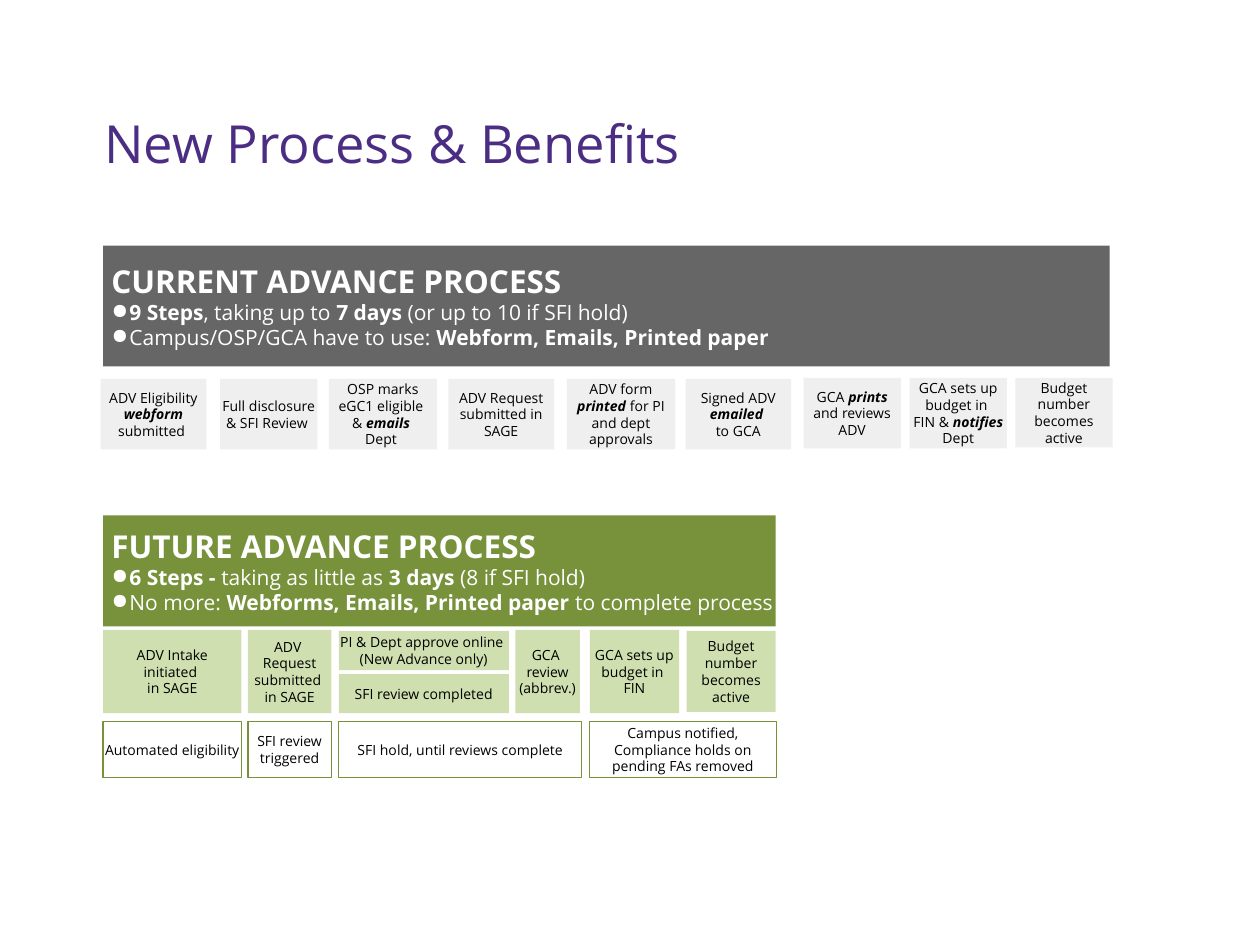
from dataclasses import dataclass

from lxml import etree
from pptx import Presentation
from pptx.dml.color import RGBColor
from pptx.enum.shapes import MSO_SHAPE
from pptx.enum.text import MSO_ANCHOR, PP_ALIGN
from pptx.oxml.ns import qn
from pptx.util import Cm, Pt

RECTANGLE = MSO_SHAPE.RECTANGLE
MIDDLE, BOTTOM = MSO_ANCHOR.MIDDLE, MSO_ANCHOR.BOTTOM
LEFT, CENTER = PP_ALIGN.LEFT, PP_ALIGN.CENTER


@dataclass(frozen=True)
class Theme:
    """Colours, type sizes and font of the slide."""
    font: str = "Open Sans"
    purple: str = "4B2E83"
    white: str = "FFFFFF"
    black: str = "000000"
    grey: str = "666666"
    pale_grey: str = "EFEFEF"
    green: str = "77923B"
    pale_green: str = "D0DFB0"
    title: int = 30
    heading: int = 18
    point: int = 12
    step: int = 8


THEME = Theme()

CURRENT_POINTS = [
    "|9 Steps|, taking up to |7 days |(or up to 10 if SFI hold)",
    "Campus/OSP/GCA have to use:| Webform, Emails, Printed paper|",
]
CURRENT_STEPS = [
    (-0.05, 2.69, 2.13, 1.42, "ADV Eligibility |webform |submitted "),
    (2.36, 2.69, 1.96, 1.42, "Full disclosure & SFI Review "),
    (4.55, 2.69, 2.18, 1.42, "OSP marks eGC1 eligible \v& |emails \v|Dept "),
    (6.96, 2.69, 2.13, 1.42, "ADV Request submitted in SAGE"),
    (9.35, 2.69, 2.18, 1.42, "ADV form |printed |for PI and dept approvals"),
    (11.74, 2.69, 2.13, 1.42, "Signed ADV |emailed |\nto GCA"),
    (14.12, 2.67, 1.96, 1.42, "GCA |prints| and reviews ADV"),
    (16.26, 2.67, 1.96, 1.42, "GCA sets up budget in \nFIN & |notifies |Dept"),
    (18.39, 2.67, 1.96, 1.4, "Budget number becomes active"),
]
FUTURE_POINTS = [
    "|6 Steps - |taking as little as |3 days |(8 if SFI hold)",
    "No more: |Webforms, Emails, Printed paper| to complete process",
]
FUTURE_STEPS = [
    (0, 2.31, 2.79, 1.68, "ADV Intake\ninitiated \nin SAGE"),
    (2.92, 2.31, 1.68, 1.68, "ADV \nRequest submitted \nin SAGE"),
    (4.75, 2.33, 3.43, 0.79, "PI & Dept approve online \v(New Advance only)"),
    (4.75, 3.2, 3.43, 0.79, "SFI review completed"),
    (8.31, 2.31, 1.3, 1.68, "GCA \nreview (abbrev.)"),
    (9.81, 2.31, 1.8, 1.68, "GCA sets up budget in \nFIN"),
    (11.76, 2.33, 1.8, 1.63, "Budget number becomes active"),
]
FUTURE_NOTES = [
    (0, 4.16, 2.79, 1.12, "Automated eligibility"),
    (2.92, 4.16, 1.68, 1.12, "SFI review triggered"),
    (4.75, 4.16, 4.9, 1.12, "SFI hold, until reviews complete"),
    (9.81, 4.16, 3.76, 1.12, "Campus notified, Compliance holds on pending FAs removed"),
]


def set_frame(frame, anchor, side=0.0, edge=0.25):
    """Set wrapping, anchor and insets of a text frame."""
    frame.word_wrap = True
    frame.vertical_anchor = anchor
    frame.margin_left = frame.margin_right = Cm(side)
    frame.margin_top = frame.margin_bottom = Cm(edge)


def add_bullet(para, color):
    """Give a paragraph a hanging round bullet."""
    props = para._p.get_or_add_pPr()
    props.set("marL", str(Cm(0.53)))
    props.set("indent", str(Cm(-0.36)))
    fill = etree.SubElement(props, qn("a:buClr"))
    etree.SubElement(fill, qn("a:srgbClr")).set("val", color)
    etree.SubElement(props, qn("a:buChar")).set("char", "●")


def write(para, text, *, size, color, align=LEFT, bold=False, italic_marks=False, bullet=False):
    """Write text in a paragraph; bars enclose emphasis, vertical tabs break lines."""
    if bullet:
        add_bullet(para, color)
    para.alignment = align
    for index, piece in enumerate(text.split("|")):
        marked = index % 2 == 1
        for number, line in enumerate(piece.split("\v")):
            if number:
                para.add_line_break()
            if not line:
                continue
            span = para.add_run()
            span.text = line
            span.font.name = THEME.font
            span.font.size = Pt(size)
            span.font.bold = bold or marked
            span.font.italic = marked and italic_marks
            span.font.color.rgb = RGBColor.from_string(color)


def add_block(page, left, top, width, height, fill, line=None):
    """Add a flat rectangle and return it."""
    box = page.shapes.add_shape(RECTANGLE, Cm(left), Cm(top), Cm(width), Cm(height))
    box.shadow.inherit = False
    box.fill.solid()
    box.fill.fore_color.rgb = RGBColor.from_string(fill)
    if line:
        box.line.color.rgb = RGBColor.from_string(line)
        box.line.width = Pt(0.75)
    else:
        box.line.fill.background()
    return box


def add_title(page, left, top, width, height, text):
    """Add the slide title."""
    frame = page.shapes.add_textbox(Cm(left), Cm(top), Cm(width), Cm(height)).text_frame
    set_frame(frame, BOTTOM, side=0.25)
    para = frame.paragraphs[0]
    para.line_spacing = 0.9
    write(para, text, size=THEME.title, color=THEME.purple)


def add_banner(page, left, top, width, height, heading, points, fill):
    """Add a coloured banner with a heading and bullet points."""
    frame = add_block(page, left, top, width, height, fill).text_frame
    set_frame(frame, MIDDLE)
    write(frame.paragraphs[0], heading, size=THEME.heading, color=THEME.white, bold=True)
    for point in points:
        write(frame.add_paragraph(), point, size=THEME.point, color=THEME.white, bullet=True)


def add_steps(page, left, top, steps, fill, line=None, edge=0.25):
    """Add step boxes at offsets from the corner of their region."""
    for across, down, width, height, text in steps:
        frame = add_block(page, left + across, top + down, width, height, fill, line).text_frame
        set_frame(frame, MIDDLE, edge=edge)
        for index, part in enumerate(text.split("\n")):
            para = frame.add_paragraph() if index else frame.paragraphs[0]
            write(para, part, size=THEME.step, color=THEME.black, align=CENTER, italic_marks=True)


def add_current_process(page, left, top, width, height):
    """Add the current process: banner and nine steps."""
    add_banner(page, left, top, width, height, " CURRENT ADVANCE PROCESS", CURRENT_POINTS, THEME.grey)
    add_steps(page, left, top, CURRENT_STEPS, THEME.pale_grey)


def add_future_process(page, left, top, width, height):
    """Add the future process: banner, steps and outlined notes."""
    add_banner(page, left, top, width, height, " FUTURE ADVANCE PROCESS", FUTURE_POINTS, THEME.green)
    add_steps(page, left, top, FUTURE_STEPS, THEME.pale_green)
    add_steps(page, left, top, FUTURE_NOTES, THEME.white, line=THEME.green, edge=0)


def main():
    """Build and save the deck."""
    deck = Presentation()
    deck.slide_width, deck.slide_height = Cm(25.4), Cm(19.05)
    page = deck.slides.add_slide(deck.slide_layouts[6])
    add_title(page, 1.85, 1.04, 22.73, 2.74, "New Process & Benefits")
    add_current_process(page, 2.08, 4.95, 20.29, 2.44)
    add_future_process(page, 2.08, 10.39, 13.56, 2.24)
    deck.save("out.pptx")


if __name__ == "__main__":
    main()
